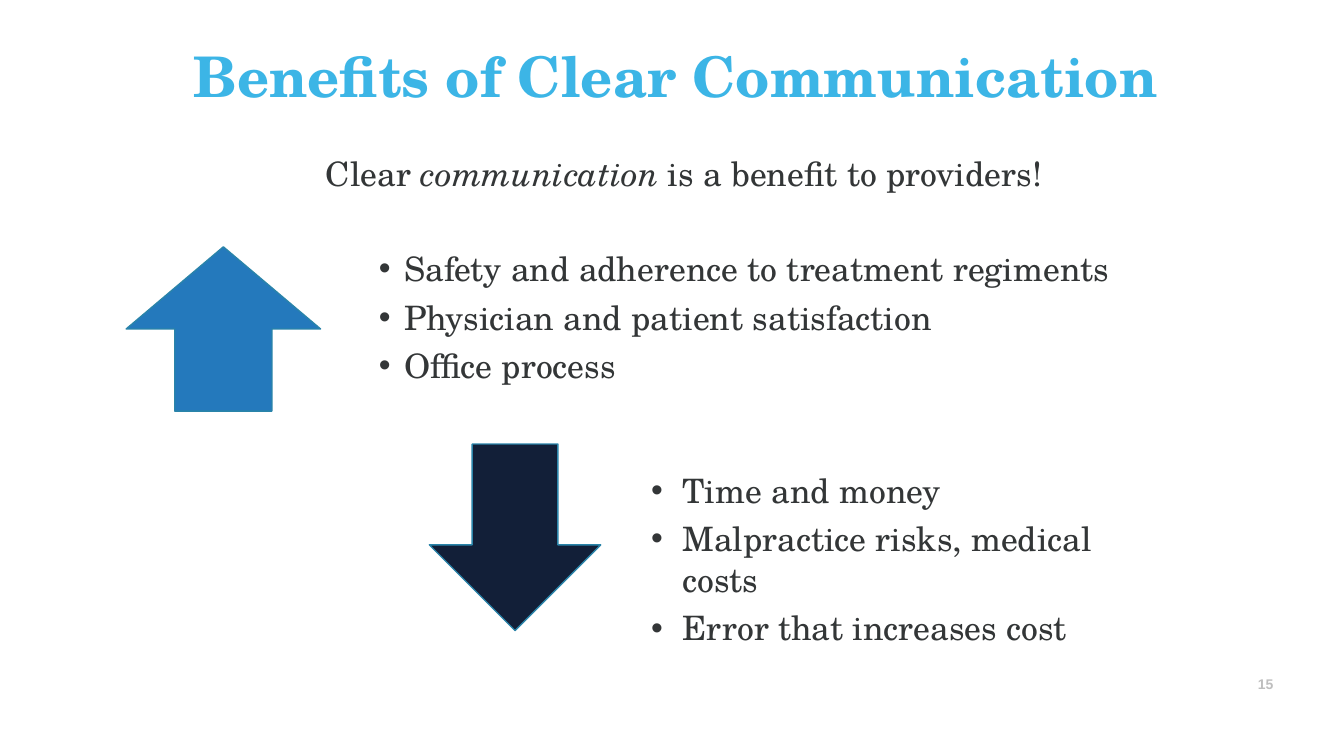
from lxml import etree
from pptx import Presentation
from pptx.dml.color import RGBColor
from pptx.enum.shapes import MSO_SHAPE
from pptx.enum.text import MSO_ANCHOR, MSO_AUTO_SIZE, PP_ALIGN
from pptx.oxml.ns import qn
from pptx.util import Cm, Pt

UP, DOWN = MSO_SHAPE.UP_ARROW, MSO_SHAPE.DOWN_ARROW
TOP, LEFT, NO_FIT = MSO_ANCHOR.TOP, PP_ALIGN.LEFT, MSO_AUTO_SIZE.NONE

SERIF, SANS = "TeX Gyre Schola", "Arial"
SKY, INK, GREY, EDGE = "3CB5E6", "333637", "BEBEBE", "2A84A9"

TITLE = "Benefits of Clear Communication"
INTRO = [("Clear ", False), ("communication ", True),
         ("is a benefit to providers!", False)]
# level, text indent (cm), hanging (cm), gap above the list (pt), items
LISTS = [
    (0, 1.98, 0.64, 39.3, ["Safety and adherence to treatment regiments",
                           "Physician and patient satisfaction",
                           "Office process"]),
    (1, 8.99, 0.79, 60, ["Time and money",
                         "Malpractice risks, medical costs",
                         "Error that increases cost"]),
]
ITEM_GAP = 6
# preset, fill, left, top, width, height (cm)
ARROWS = [(UP, "2479BC", 3.18, 6.22, 4.9, 4.14),
          (DOWN, "121F38", 10.82, 11.19, 4.32, 4.7)]
PAGE_NUMBER = "15"


def color(hex_string):
    return RGBColor.from_string(hex_string)


def place(shape, left, top, width, height, inset_left=0, inset_top=0):
    """Position a text shape and return its top-anchored text frame."""
    shape.left, shape.top = Cm(left), Cm(top)
    shape.width, shape.height = Cm(width), Cm(height)
    frame = shape.text_frame
    frame.margin_left, frame.margin_top = Cm(inset_left), Cm(inset_top)
    frame.margin_right = frame.margin_bottom = 0
    frame.word_wrap, frame.auto_size = True, NO_FIT
    frame.vertical_anchor = TOP
    return frame


def add_run(paragraph, text, size, hex_string, font=SERIF, bold=False, italic=False):
    run = paragraph.add_run()
    run.text = text
    run.font.name, run.font.size = font, Pt(size)
    run.font.bold, run.font.italic = bold, italic
    run.font.color.rgb = color(hex_string)


def format_paragraph(paragraph, indent=0, hanging=0, gap=0, bullet=None):
    paragraph.alignment = LEFT
    paragraph.space_before = Pt(gap)
    properties = paragraph._p.get_or_add_pPr()
    properties.set("marL", str(Cm(indent)))
    properties.set("indent", str(-Cm(hanging)))
    if bullet:
        etree.SubElement(properties, qn("a:buFont"), typeface=SANS)
        etree.SubElement(properties, qn("a:buChar"), char=bullet)
    else:
        etree.SubElement(properties, qn("a:buNone"))


def main():
    presentation = Presentation()
    presentation.slide_width, presentation.slide_height = Cm(33.87), Cm(19.05)
    slide = presentation.slides.add_slide(presentation.slide_layouts[1])

    title = place(slide.shapes.title, 3.99, 0.56, 25.88, 2.79, 0.89, 0.48).paragraphs[0]
    format_paragraph(title)
    add_run(title, TITLE, 40, SKY, bold=True)

    for preset, fill, *box in ARROWS:
        arrow = slide.shapes.add_shape(preset, *map(Cm, box))
        arrow.shadow.inherit = False
        arrow.fill.solid()
        arrow.fill.fore_color.rgb = color(fill)
        arrow.line.color.rgb = color(EDGE)
        arrow.line.width = Pt(0.96)

    body = place(slide.placeholders[1], 8.18, 3.81, 20.88, 12.7, 0.03, 0.03)
    intro = body.paragraphs[0]
    format_paragraph(intro)
    for text, italic in INTRO:
        add_run(intro, text, 24, INK, italic=italic)
    for level, indent, hanging, list_gap, items in LISTS:
        for index, item in enumerate(items):
            paragraph = body.add_paragraph()
            paragraph.level = level
            gap = ITEM_GAP if index else list_gap
            format_paragraph(paragraph, indent, hanging, gap, "•")
            add_run(paragraph, item, 24, INK)

    number_box = slide.shapes.add_textbox(0, 0, 0, 0)
    number = place(number_box, 31.6, 17.02, 0.8, 0.46, 0.1).paragraphs[0]
    add_run(number, PAGE_NUMBER, 10, GREY, SANS, bold=True)

    presentation.save("out.pptx")


if __name__ == "__main__":
    main()
